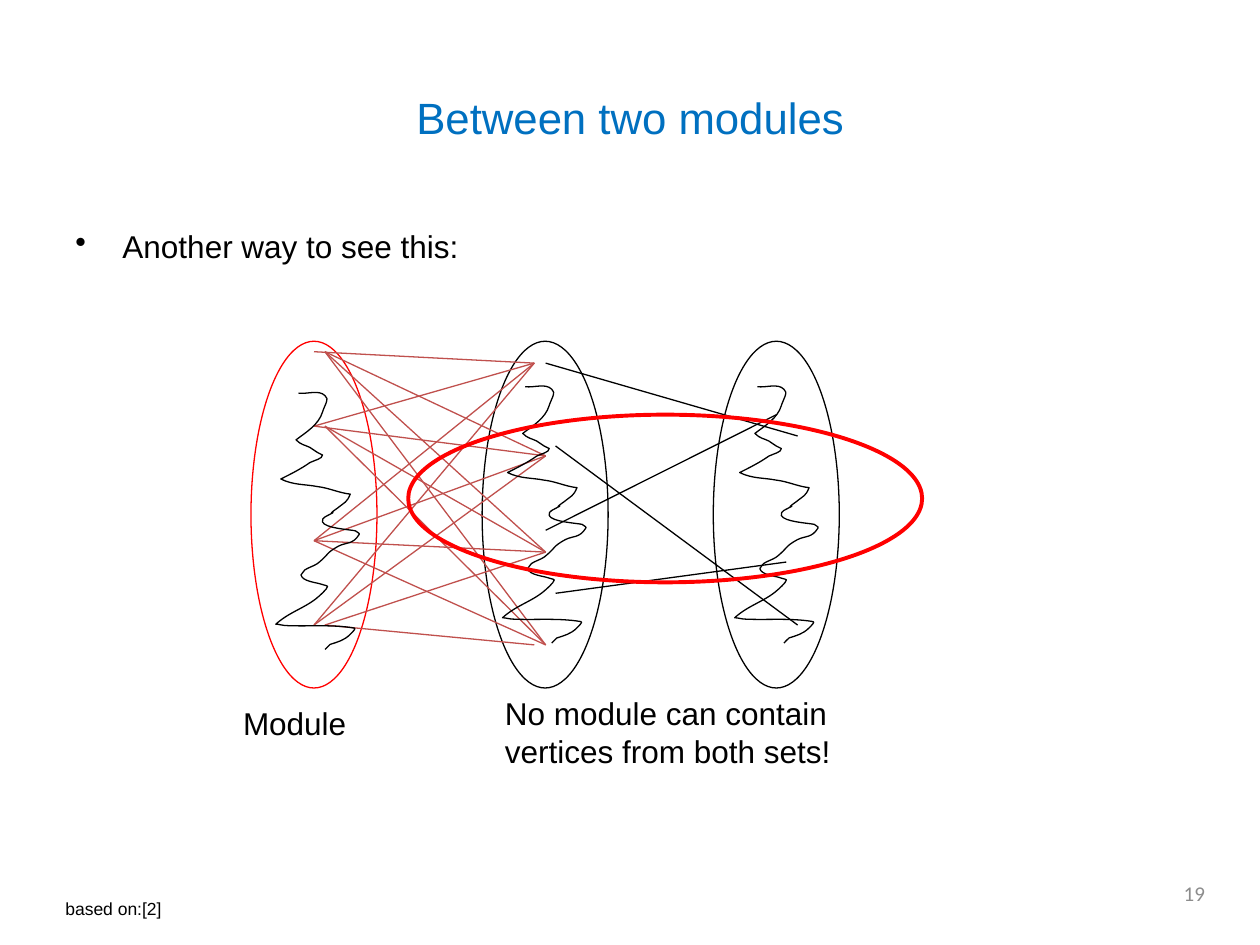
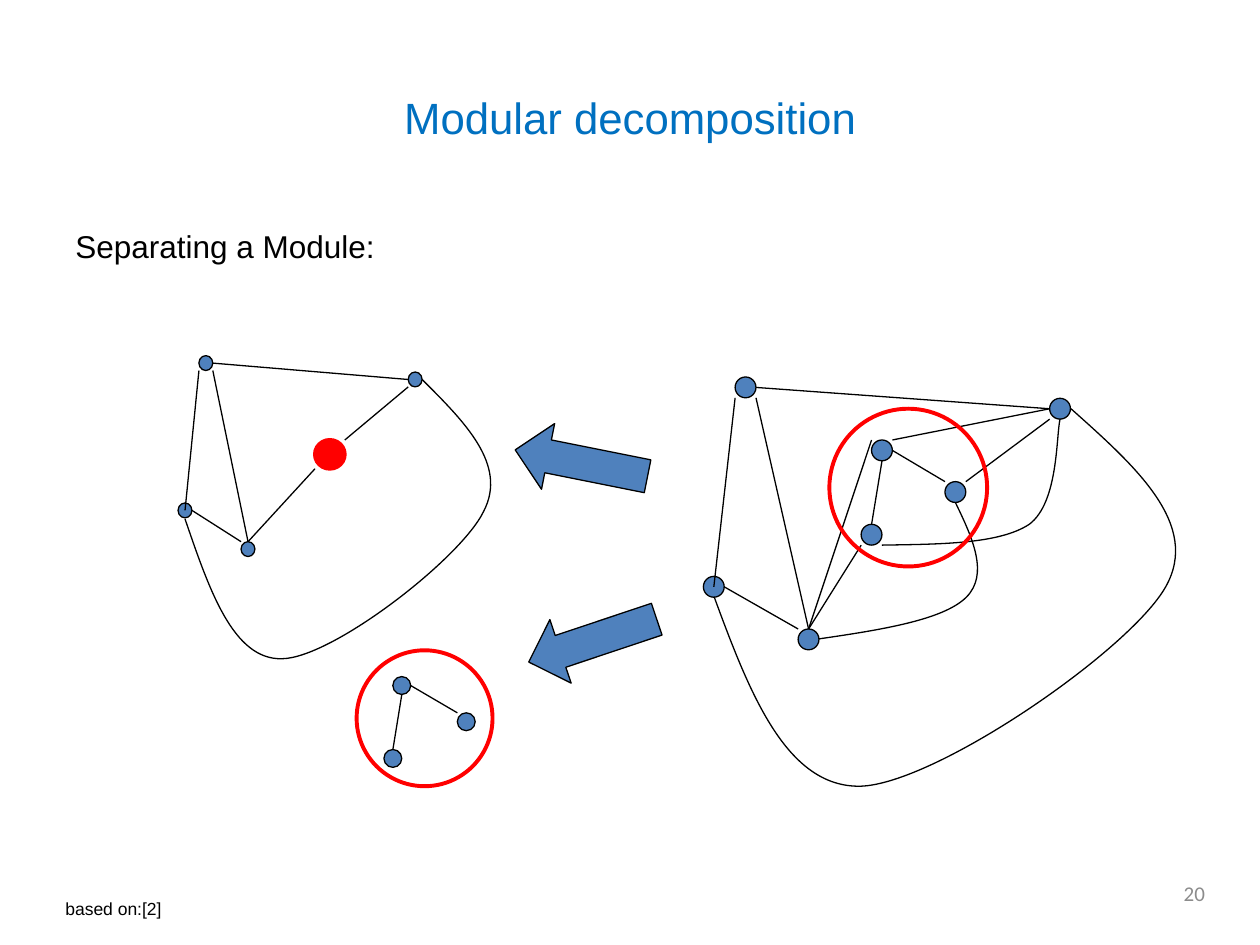
from dataclasses import dataclass
from itertools import product
from typing import Union

from lxml import etree
from pptx import Presentation
from pptx.dml.color import RGBColor
from pptx.enum.shapes import MSO_CONNECTOR, MSO_SHAPE
from pptx.enum.text import MSO_ANCHOR, PP_ALIGN
from pptx.oxml.ns import qn
from pptx.shapes.shapetree import GroupShapes, SlideShapes
from pptx.slide import Slide
from pptx.util import Cm, Pt

BLUE = RGBColor(0x00, 0x70, 0xC0)
NODE_BLUE = RGBColor(0x4F, 0x81, 0xBD)
LINK_RED = RGBColor(0xC0, 0x50, 0x4D)
RED = RGBColor(0xFF, 0x00, 0x00)
GRAY = RGBColor(0x8C, 0x8C, 0x8C)
BLACK = RGBColor(0x00, 0x00, 0x00)

ELLIPSE = MSO_SHAPE.OVAL
LEFT_ARROW = MSO_SHAPE.LEFT_ARROW
STRAIGHT = MSO_CONNECTOR.STRAIGHT
ALIGN_LEFT, ALIGN_CENTER, ALIGN_RIGHT = PP_ALIGN.LEFT, PP_ALIGN.CENTER, PP_ALIGN.RIGHT
ANCHOR_TOP, ANCHOR_MIDDLE = MSO_ANCHOR.TOP, MSO_ANCHOR.MIDDLE

THIN, THICK = 0.75, 2.25
HANGING = 0.95

Shapes = Union[SlideShapes, GroupShapes]
Point = tuple[float, float]


@dataclass(frozen=True)
class Box:
    """Position and size in centimetres."""
    left: float
    top: float
    width: float
    height: float

    def lengths(self) -> tuple[Cm, Cm, Cm, Cm]:
        return Cm(self.left), Cm(self.top), Cm(self.width), Cm(self.height)


@dataclass(frozen=True)
class Node:
    x: float
    y: float
    rx: float
    ry: float
    fill: RGBColor = NODE_BLUE
    outline: RGBColor = BLACK
    weight: float = THIN

    def at(self, side: Point) -> Point:
        """Point on the node's bounding box in the given direction."""
        return self.x + side[0] * self.rx, self.y + side[1] * self.ry


@dataclass(frozen=True)
class Edge:
    start: str
    start_side: Point
    end: str
    end_side: Point


# Directions from a node's centre
CENTER, TOP, BOTTOM, LEFT, RIGHT = (0, 0), (0, -1), (0, 1), (-1, 0), (1, 0)
TOP_LEFT, TOP_RIGHT = (-1, -1), (1, -1)
BOTTOM_LEFT, BOTTOM_RIGHT = (-1, 1), (1, 1)

# Edges outside the module, edges inside it, and those that join the two
OUTER_EDGES = [
    Edge("left", RIGHT, "base", TOP_LEFT),
    Edge("left", CENTER, "top", BOTTOM_LEFT),
    Edge("base", TOP, "top", BOTTOM_RIGHT),
    Edge("top", RIGHT, "right", LEFT),
]
INNER_EDGES = [
    Edge("inner left", TOP, "inner top", BOTTOM),
    Edge("inner top", RIGHT, "inner right", TOP_LEFT),
]
JOINING_EDGES = [
    Edge("inner right", TOP_RIGHT, "right", BOTTOM_LEFT),
    Edge("inner top", TOP_RIGHT, "right", LEFT),
    Edge("inner left", BOTTOM_LEFT, "base", TOP),
    Edge("inner top", TOP_LEFT, "base", TOP),
]
CONTRACTED_EDGES = [
    Edge("module", TOP_RIGHT, "right", BOTTOM_LEFT),
    Edge("module", BOTTOM_LEFT, "base", TOP),
]

# Start point, then three points per Bézier segment, in 66ths of the width
SCRIBBLE_STEP = 1.68 / 66
SCRIBBLE = [
    (18, 3), (25, 4), (34, 0), (39, 5), (43, 7), (38, 14), (37, 18),
    (34, 28), (24, 34), (16, 40), (20, 44), (23, 44), (27, 46),
    (29, 47), (31, 49), (33, 50), (34, 51), (36, 51), (37, 52),
    (37, 55), (31, 56), (27, 58), (20, 63), (12, 67), (4, 71),
    (14, 76), (23, 75), (33, 77), (42, 78), (50, 82), (59, 83),
    (56, 90), (55, 89), (49, 94), (36, 103), (54, 93), (39, 101),
    (38, 102), (36, 103), (37, 105), (39, 110), (58, 111), (63, 112),
    (64, 113), (67, 114), (66, 115), (61, 123), (56, 121), (50, 124),
    (39, 130), (43, 130), (33, 138), (30, 140), (26, 141), (23, 143),
    (22, 145), (20, 146), (20, 147), (21, 152), (32, 153), (35, 154),
    (37, 155), (40, 155), (41, 156), (41, 158), (34, 164), (34, 164),
    (24, 173), (11, 176), (0, 186), (3, 186), (5, 187), (7, 187),
    (25, 188), (44, 186), (62, 189), (64, 189), (61, 192), (59, 194),
    (54, 199), (49, 200), (43, 202), (40, 205), (41, 204), (39, 206),
]


def add_text(slide: Slide, text: str, box: Box, *, size: float = 18,
             color: RGBColor = BLACK, font: str = "Arial",
             align: PP_ALIGN = ALIGN_LEFT, anchor: MSO_ANCHOR = ANCHOR_TOP,
             hanging: float = 0, bullet: str = "") -> None:
    frame = slide.shapes.add_textbox(*box.lengths()).text_frame
    frame.word_wrap = True
    frame.vertical_anchor = anchor
    paragraph = frame.paragraphs[0]
    paragraph.alignment = align
    run = paragraph.add_run()
    run.text = text
    run.font.size, run.font.name = Pt(size), font
    run.font.color.rgb = color
    if hanging:
        properties = paragraph._p.get_or_add_pPr()
        properties.set("marL", str(Cm(hanging)))
        properties.set("indent", str(-Cm(hanging)))
        if bullet:
            etree.SubElement(properties, qn("a:buChar")).set("char", bullet)


def add_preset(shapes: Shapes, kind: MSO_SHAPE, box: Box, *,
               fill: RGBColor | None = None, outline: RGBColor = BLACK,
               weight: float = THIN, rotation: float = 0) -> None:
    shape = shapes.add_shape(kind, *box.lengths())
    shape.shadow.inherit = False
    shape.rotation = rotation
    if fill is None:
        shape.fill.background()
    else:
        shape.fill.solid()
        shape.fill.fore_color.rgb = fill
    shape.line.color.rgb = outline
    shape.line.width = Pt(weight)


def add_line(shapes: Shapes, start: Point, end: Point,
             color: RGBColor = BLACK) -> None:
    line = shapes.add_connector(STRAIGHT, *(Cm(v) for v in (*start, *end)))
    line.line.color.rgb = color
    line.line.width = Pt(THIN)
    etree.SubElement(line._element.spPr, qn("a:effectLst"))


def add_curve(shapes: Shapes, points: list[Point]) -> None:
    """Draw a start point followed by three points per Bézier segment."""
    start, *rest = [(Cm(x), Cm(y)) for x, y in points]
    builder = shapes.build_freeform(*start)
    builder.add_line_segments(rest, close=False)
    curve = builder.convert_to_shape()
    curve.shadow.inherit = False
    curve.fill.background()
    curve.line.color.rgb = BLACK
    curve.line.width = Pt(THIN)
    # Turn each three straight segments into one cubic segment
    segments = list(curve._element.iter(qn("a:lnTo")))
    for first in range(0, len(segments), 3):
        cubic = etree.SubElement(segments[first].getparent(), qn("a:cubicBezTo"))
        for segment in segments[first:first + 3]:
            cubic.append(segment[0])
            segment.getparent().remove(segment)


def add_graph(shapes: Shapes, nodes: dict[str, Node], edges: list[Edge]) -> None:
    for node in nodes.values():
        box = Box(*node.at(TOP_LEFT), 2 * node.rx, 2 * node.ry)
        add_preset(shapes, ELLIPSE, box, fill=node.fill,
                   outline=node.outline, weight=node.weight)
    for edge in edges:
        add_line(shapes, nodes[edge.start].at(edge.start_side),
                 nodes[edge.end].at(edge.end_side))


def make_nodes(centers: dict[str, Point], rx: float, ry: float) -> dict[str, Node]:
    return {name: Node(x, y, rx, ry) for name, (x, y) in centers.items()}


def add_base_slide(prs: Presentation, title: str, lead: str, number: int,
                   bullet: str = "") -> Slide:
    slide = prs.slides.add_slide(prs.slide_layouts[6])
    add_text(slide, title, Box(1.27, 0.76, 22.86, 3.18), size=25, color=BLUE,
             align=ALIGN_CENTER, anchor=ANCHOR_MIDDLE)
    add_text(slide, lead, Box(1.27, 4.45, 22.86, 12.57), hanging=HANGING, bullet=bullet)
    add_text(slide, str(number), Box(18.62, 17.5, 5.92, 1.02), size=12, color=GRAY,
             font="Calibri", align=ALIGN_RIGHT, anchor=ANCHOR_MIDDLE)
    add_text(slide, "based on:[2]", Box(1.07, 17.98, 4.67, 0.69), size=10)
    return slide


def build_two_modules(prs: Presentation) -> None:
    slide = add_base_slide(prs, "Between two modules", "Another way to see this:", 19, "•")
    shapes = slide.shapes

    # Vertex sets
    for index, outline in enumerate((RED, BLACK, BLACK)):
        add_preset(shapes, ELLIPSE, Box(5.06 + 4.66 * index, 6.88, 2.54, 6.99),
                   outline=outline)

    # Every module vertex joins every vertex of the middle set;
    # from link number `shift` on, a link starts a little further right
    module_vertices = [(7.09, 1), (8.59, 2), (10.9, 4), (12.6, 2)]
    middle_heights = [7.32, 9.19, 11.13, 13]
    for row, column in product(range(4), repeat=2):
        y, shift = module_vertices[row]
        start_x = 6.55 if column >= shift else 6.33
        end_x = 10.77 if column == 0 or row == column == 3 else 11
        add_line(shapes, (start_x, y), (end_x, middle_heights[column]), LINK_RED)

    # Partial links between the middle and right sets
    for start, end in [((11, 7.32), (16.08, 8.79)), ((11, 10.69), (15.65, 8.36)),
                       ((11.2, 11.96), (15.85, 11.33)), ((16.08, 12.6), (11.2, 8.99))]:
        add_line(shapes, start, end)

    for left, top in [(5.56, 7.85), (10.13, 7.72), (14.81, 7.72)]:
        add_curve(shapes, [(left + x * SCRIBBLE_STEP, top + y * SCRIBBLE_STEP)
                           for x, y in SCRIBBLE])

    # Impossible module across both sets
    add_preset(shapes, ELLIPSE, Box(8.23, 8.36, 10.36, 3.38), outline=RED, weight=THICK)
    add_text(slide, "Module", Box(4.65, 14.07, 3.61, 1.02))
    add_text(slide, "No module can contain vertices from both sets!",
             Box(9.93, 13.87, 8.46, 1.8))


def build_decomposition(prs: Presentation) -> None:
    shapes = add_base_slide(prs, "Modular decomposition", "Separating a Module:", 20).shapes

    # Whole graph with its module
    whole = make_nodes({
        "base": (16.3, 12.89), "left": (14.39, 11.83), "right": (21.37, 8.24),
        "top": (15.03, 7.81), "inner top": (17.78, 9.08),
        "inner left": (17.57, 10.78), "inner right": (19.26, 9.92)}, 0.21, 0.21)
    add_graph(shapes, whole, OUTER_EDGES + INNER_EDGES + JOINING_EDGES)
    add_curve(shapes, [(17.78, 10.99), (18.97, 10.97), (20.14, 10.97), (20.75, 10.57),
                       (21.34, 10.13), (21.29, 8.79), (21.37, 8.45)])
    add_curve(shapes, [(19.26, 10.13), (19.61, 10.85), (19.94, 11.58), (19.48, 12.04),
                       (19.02, 12.5), (17.75, 12.7), (16.51, 12.88)])
    add_curve(shapes, [(21.59, 8.24), (22.89, 9.4), (24.21, 10.57), (23.5, 11.83),
                       (22.78, 13.11), (18.87, 15.8), (17.35, 15.85),
                       (15.85, 15.88), (15.11, 13.97), (14.4, 12.04)])
    add_preset(shapes, ELLIPSE, Box(16.72, 8.24, 3.18, 3.18), outline=RED, weight=THICK)

    # Arrows to the two parts
    for left, top, rotation in [(10.36, 8.66, 11.3), (10.59, 12.24, 341.5)]:
        add_preset(shapes, LEFT_ARROW, Box(left, top, 2.72, 1.35),
                   fill=NODE_BLUE, rotation=rotation)

    # Graph with the module shrunk to one node
    contracted = make_nodes({"base": (5, 11.07), "left": (3.73, 10.29),
                             "right": (8.37, 7.65), "top": (4.15, 7.32)}, 0.14, 0.15)
    contracted["module"] = Node(6.65, 9.16, 0.3, 0.29, RED, RED, THICK)
    add_graph(shapes, contracted, OUTER_EDGES + CONTRACTED_EDGES)
    add_curve(shapes, [(8.51, 7.65), (9.37, 8.51), (10.24, 9.37), (9.75, 10.31),
                       (9.3, 11.25), (6.71, 13.26), (5.69, 13.28),
                       (4.7, 13.31), (4.22, 11.89), (3.73, 10.46)])

    # Module on its own
    module = shapes.add_group_shape().shapes
    add_graph(module, make_nodes({"inner top": (8.1, 13.82), "inner left": (7.92, 15.29),
                                  "inner right": (9.4, 14.55)}, 0.18, 0.18), INNER_EDGES)
    add_preset(module, ELLIPSE, Box(7.19, 13.11, 2.74, 2.74), outline=RED, weight=THICK)


def main() -> None:
    prs = Presentation()
    prs.slide_width, prs.slide_height = Cm(25.4), Cm(19.05)
    build_two_modules(prs)
    build_decomposition(prs)
    prs.save("out.pptx")


if __name__ == "__main__":
    main()
